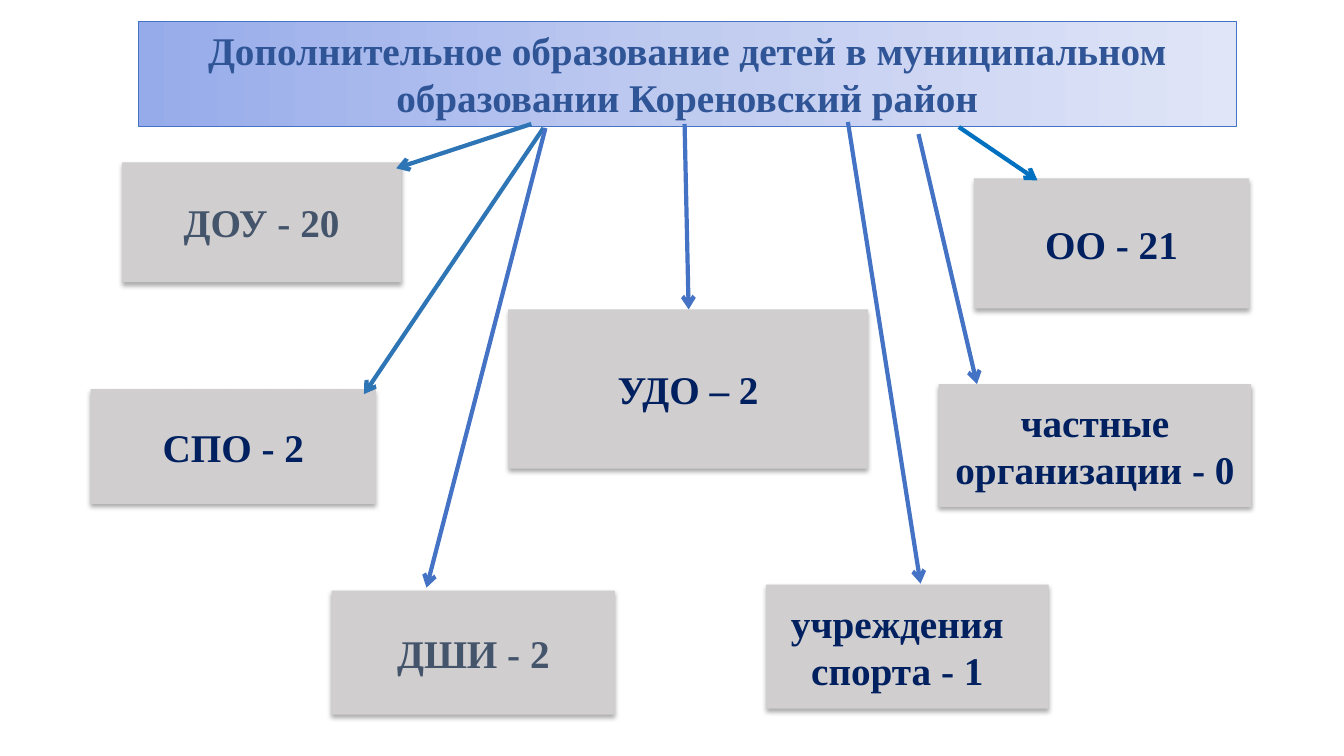
"""Build a slide on extra education for children in Korenovsky district."""
import copy
import pptx
import pptx.util
import pptx.oxml
import pptx.dml.color
import pptx.enum.text
import pptx.enum.shapes

Inches, Pt = pptx.util.Inches, pptx.util.Pt
RGB = pptx.dml.color.RGBColor.from_string
Anchor = pptx.enum.text.MSO_ANCHOR
NS = 'xmlns:a="http://schemas.openxmlformats.org/drawingml/2006/main"'
SHADOW = f'''<a:effectLst {NS}><a:outerShdw blurRad="44450" dist="27940" dir="5400000"
 algn="ctr" rotWithShape="0"><a:srgbClr val="000000"><a:alpha val="32000"/></a:srgbClr>
</a:outerShdw></a:effectLst>'''

THEME = {
    "font": "Times New Roman", "size": Pt(28),
    "title": "2F5597", "box": "D0CECE", "navy": "002060", "slate": "44546A",
    "blue": "4472C4", "steel": "2E75B6", "bright": "0070C0",
    "fade": ["96ABEA", "C0CBF0", "E0E5F7"],
}


def write(shape, text, color, anchor):
    """Fill a shape with centred bold text."""
    frame = shape.text_frame
    frame.text = text
    frame.word_wrap = True
    frame.auto_size = pptx.enum.text.MSO_AUTO_SIZE.NONE
    frame.vertical_anchor = anchor
    for para in frame.paragraphs:
        para.alignment = pptx.enum.text.PP_ALIGN.CENTER
        for run in para.runs:
            font = run.font
            font.name, font.size, font.bold = THEME["font"], THEME["size"], True
            font.color.rgb = RGB(THEME[color])


deck = pptx.Presentation()
deck.slide_width, deck.slide_height = Inches(13.33), Inches(7.5)
slide = deck.slides.add_slide(deck.slide_layouts[5])

title = slide.shapes.title
title.left, title.top = Inches(1.37), Inches(0.21)
title.width, title.height = Inches(10.89), Inches(1.04)
write(title, "Дополнительное образование детей в муниципальном образовании Кореновский район",
      "title", Anchor.TOP)
title.fill.gradient()
title.fill.gradient_angle = 0
stops = title.fill.gradient_stops
last = stops[1]._gs
last.addprevious(copy.deepcopy(last))
for i, (stop, color) in enumerate(zip(title.fill.gradient_stops, THEME["fade"])):
    stop.position = i / 2
    stop.color.rgb = RGB(color)
title.line.color.rgb = RGB(THEME["blue"])
title.line.width = Pt(0.5)

boxes = [
    ("ДОУ - 20", "slate", 1.21, 1.61, 2.77, 1.19),
    ("ОО - 21", "navy", 9.66, 1.77, 2.73, 1.29),
    ("УДО – 2", "navy", 5.04, 3.07, 3.57, 1.58),
    ("СПО - 2", "navy", 0.9, 3.86, 2.83, 1.14),
    ("учреждения\nспорта - 1", "navy", 7.6, 5.8, 2.8, 1.23),
    ("частные организации - 0", "navy", 9.31, 3.81, 3.1, 1.22),
    ("ДШИ - 2", "slate", 3.29, 5.86, 2.81, 1.23),
]
for text, color, *place in boxes:
    box = slide.shapes.add_shape(pptx.enum.shapes.MSO_SHAPE.RECTANGLE, *map(Inches, place))
    box.fill.solid()
    box.fill.fore_color.rgb = RGB(THEME["box"])
    box.line.fill.background()
    box._element.spPr.append(pptx.oxml.parse_xml(SHADOW))
    write(box, text, color, Anchor.MIDDLE)
    if "\n" in text:
        first = box.text_frame.paragraphs[0]
        first._p.get_or_add_pPr().set("marR", str(Inches(0.2)))

arrows = [
    ("steel", 5.27, 1.23, 3.93, 1.67),
    ("steel", 5.39, 1.27, 3.61, 3.91),
    ("blue", 5.41, 1.27, 4.23, 5.83),
    ("blue", 6.79, 1.23, 6.83, 3.07),
    ("blue", 9.11, 1.33, 9.69, 3.81),
    ("bright", 9.51, 1.26, 10.29, 1.79),
    ("blue", 8.41, 1.21, 9.13, 5.79),
]
for color, *ends in arrows:
    arrow = slide.shapes.add_connector(
        pptx.enum.shapes.MSO_CONNECTOR.STRAIGHT, *map(Inches, ends))
    arrow.line.color.rgb = RGB(THEME[color])
    arrow.line.width = Pt(3)
    arrow.line._ln.append(pptx.oxml.parse_xml(f'<a:tailEnd {NS} type="arrow"/>'))
    arrow._element.spPr.append(pptx.oxml.parse_xml(f"<a:effectLst {NS}/>"))

deck.save("out.pptx")
